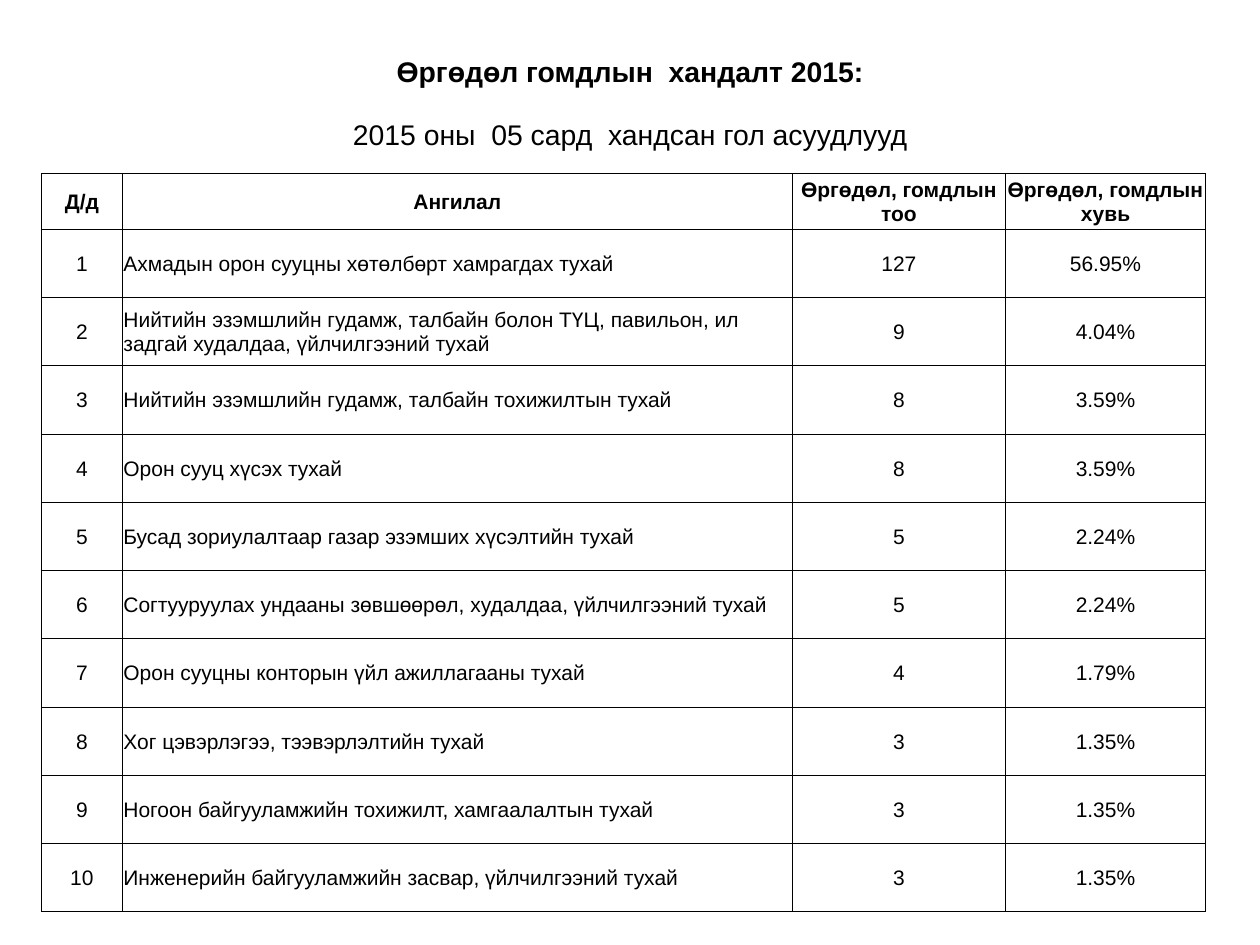
from lxml import etree
from pptx import Presentation
from pptx.dml.color import RGBColor
from pptx.enum.text import MSO_ANCHOR, MSO_AUTO_SIZE, PP_ALIGN
from pptx.oxml.ns import qn
from pptx.util import Inches, Pt

CENTER, LEFT = PP_ALIGN.CENTER, PP_ALIGN.LEFT
MIDDLE = MSO_ANCHOR.MIDDLE
NO_AUTOFIT = MSO_AUTO_SIZE.NONE
TITLE_ONLY = 5

COLORS = {"text": "000000", "border": "000000", "cell": "FFFFFF"}

TITLE = "Өргөдөл гомдлын  хандалт 2015:"
SUBTITLE = "2015 оны  05 сард  хандсан гол асуудлууд"

HEADERS = ["Д/д", "Ангилал", "Өргөдөл, гомдлын тоо", "Өргөдөл, гомдлын хувь"]
COMPLAINTS = [
    ("Ахмадын орон сууцны хөтөлбөрт хамрагдах тухай", "127", "56.95%"),
    ("Нийтийн эзэмшлийн гудамж, талбайн болон ТҮЦ, павильон, ил задгай "
     "худалдаа, үйлчилгээний тухай", "9", "4.04%"),
    ("Нийтийн эзэмшлийн гудамж, талбайн тохижилтын тухай", "8", "3.59%"),
    ("Орон сууц хүсэх тухай", "8", "3.59%"),
    ("Бусад зориулалтаар газар эзэмших хүсэлтийн тухай", "5", "2.24%"),
    ("Согтууруулах ундааны зөвшөөрөл, худалдаа, үйлчилгээний тухай", "5", "2.24%"),
    ("Орон сууцны конторын үйл ажиллагааны тухай", "4", "1.79%"),
    ("Хог цэвэрлэгээ, тээвэрлэлтийн тухай", "3", "1.35%"),
    ("Ногоон байгууламжийн тохижилт, хамгаалалтын тухай", "3", "1.35%"),
    ("Инженерийн байгууламжийн засвар, үйлчилгээний тухай", "3", "1.35%"),
]
COLUMN_WIDTHS = [0.64, 5.32, 1.69, 1.59]
COLUMN_ALIGNMENTS = [CENTER, LEFT, CENTER, CENTER]


class SlideBuilder:
    """Holds the style and the current slide."""

    font_name = "Arial"
    title_size = 16.2
    cell_size = 12
    border_width = 0.5
    cell_margin = 0.01

    def __init__(self, slide):
        self.slide = slide

    def format_paragraph(self, paragraph, size, bold, alignment):
        paragraph.alignment = alignment
        font = paragraph.font
        font.name, font.size, font.bold = self.font_name, Pt(size), bold
        font.color.rgb = RGBColor.from_string(COLORS["text"])

    def add_title(self, title, subtitle, left, top, width, height):
        shape = self.slide.shapes.title
        shape.left, shape.top = Inches(left), Inches(top)
        shape.width, shape.height = Inches(width), Inches(height)
        frame = shape.text_frame
        frame.text = f"{title}\n{subtitle}"
        frame.auto_size = NO_AUTOFIT
        frame.vertical_anchor = MIDDLE
        for paragraph, bold in zip(frame.paragraphs, (True, False)):
            self.format_paragraph(paragraph, self.title_size, bold, CENTER)
            paragraph.line_spacing = 0.9
            paragraph.space_before = Pt(0)
        frame.paragraphs[1].space_before = Pt(18.6)

    def add_table(self, rows, left, top, height, header_height):
        table = self.slide.shapes.add_table(
            len(rows), len(COLUMN_WIDTHS), Inches(left), Inches(top),
            Inches(sum(COLUMN_WIDTHS)), Inches(height)).table
        table.first_row = table.horz_banding = False
        for column, width in zip(table.columns, COLUMN_WIDTHS):
            column.width = Inches(width)
        body_height = (height - header_height) / (len(rows) - 1)
        for index, values in enumerate(rows):
            is_header = index == 0
            row = table.rows[index]
            row.height = Inches(header_height if is_header else body_height)
            for cell, value, alignment in zip(row.cells, values, COLUMN_ALIGNMENTS):
                self.fill_cell(cell, value, is_header, CENTER if is_header else alignment)

    def fill_cell(self, cell, value, bold, alignment):
        cell.text = value
        cell.vertical_anchor = MIDDLE
        cell.margin_left = cell.margin_right = cell.margin_top = Inches(self.cell_margin)
        cell.margin_bottom = 0
        self.format_paragraph(cell.text_frame.paragraphs[0], self.cell_size, bold, alignment)
        # Borders come before the fill in the cell properties
        properties = cell._tc.get_or_add_tcPr()
        for side in ("a:lnL", "a:lnR", "a:lnT", "a:lnB"):
            line = etree.SubElement(properties, qn(side), w=str(Pt(self.border_width)))
            solid = etree.SubElement(line, qn("a:solidFill"))
            etree.SubElement(solid, qn("a:srgbClr"), val=COLORS["border"])
        cell.fill.solid()
        cell.fill.fore_color.rgb = RGBColor.from_string(COLORS["cell"])


def main():
    presentation = Presentation()
    presentation.slide_width, presentation.slide_height = Inches(10), Inches(7.5)
    slide = presentation.slides.add_slide(presentation.slide_layouts[TITLE_ONLY])
    builder = SlideBuilder(slide)

    # Heading
    builder.add_title(TITLE, SUBTITLE, 0.69, 0.4, 8.62, 0.86)

    # Complaints table, numbered from 1
    numbered = [(str(number), *complaint) for number, complaint in enumerate(COMPLAINTS, 1)]
    builder.add_table([HEADERS, *numbered], 0.33, 1.38, 5.86, 0.44)

    presentation.save("out.pptx")


if __name__ == "__main__":
    main()
